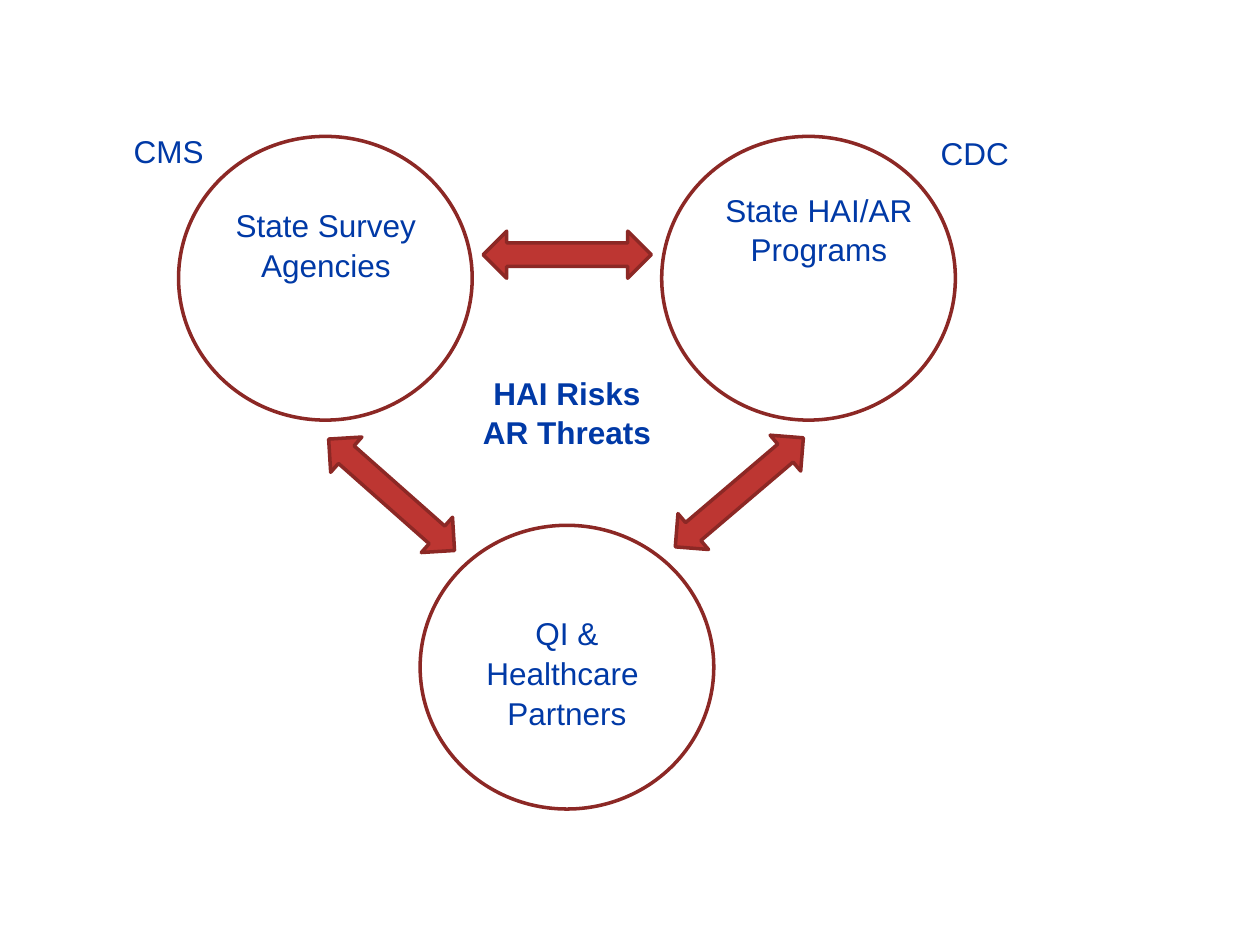
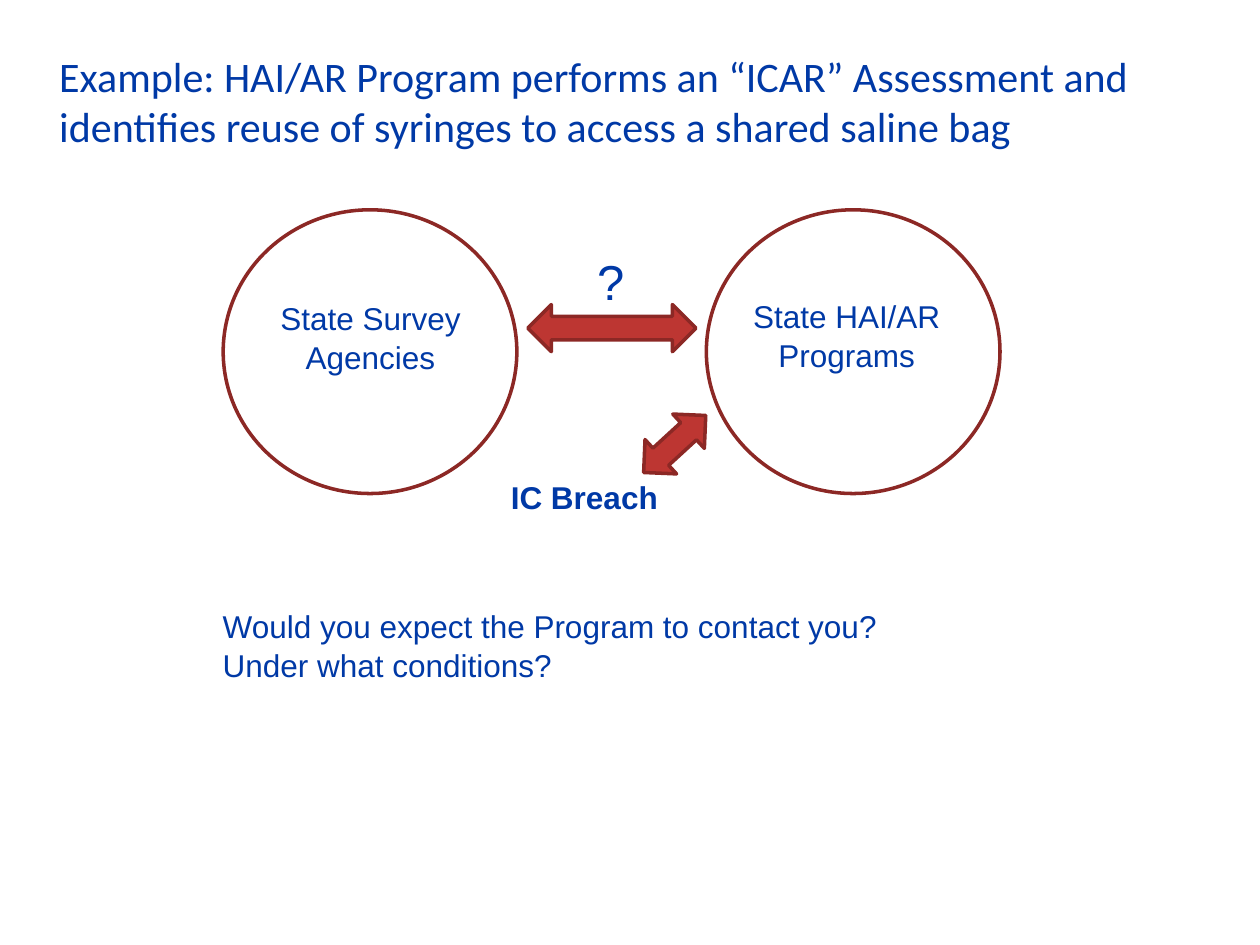
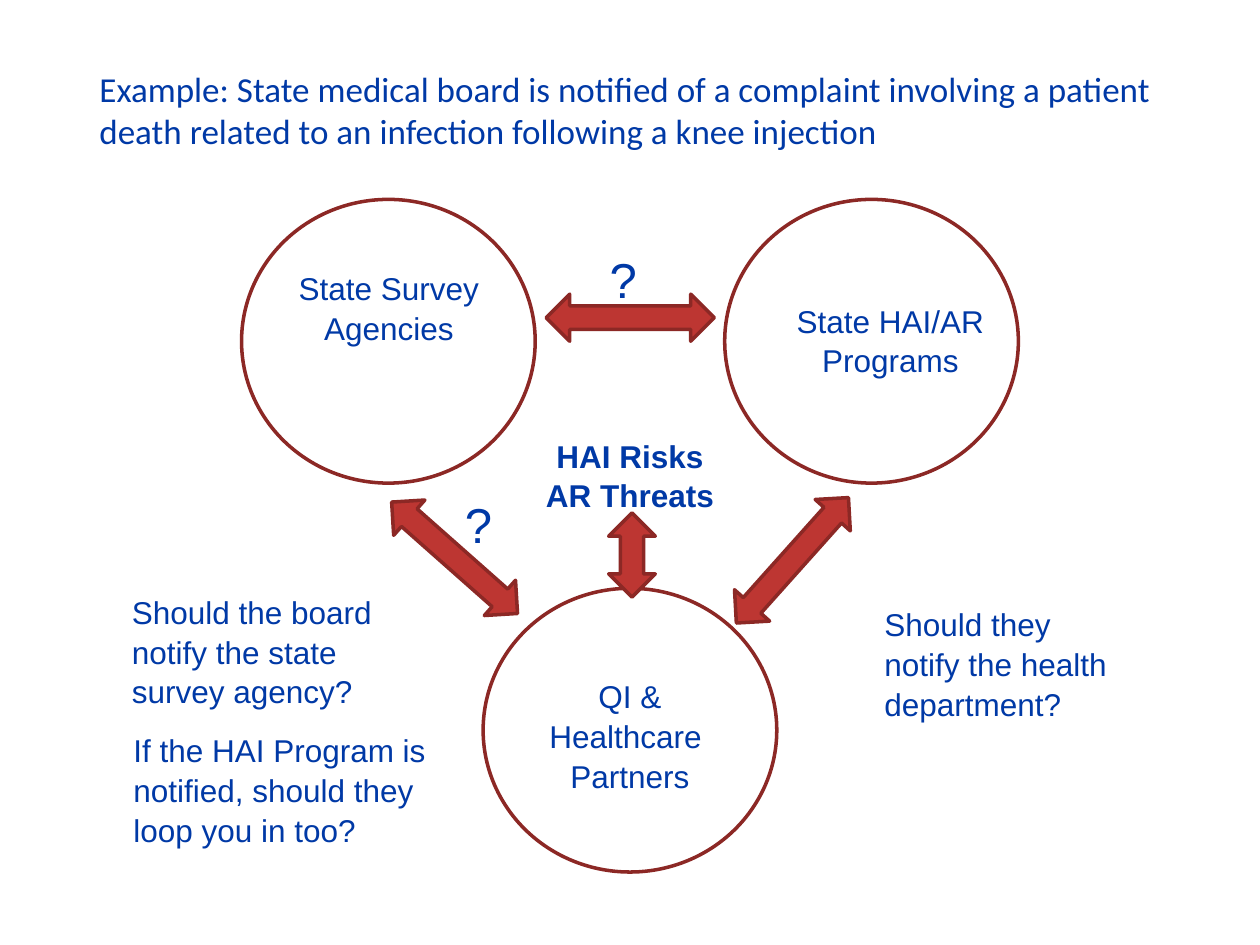
from pptx import Presentation
from pptx.dml.color import RGBColor
from pptx.enum.shapes import MSO_SHAPE
from pptx.enum.text import MSO_ANCHOR, MSO_AUTO_SIZE, PP_ALIGN
from pptx.util import Cm, Pt

CIRCLE = MSO_SHAPE.FLOWCHART_CONNECTOR
ARROW = MSO_SHAPE.LEFT_RIGHT_ARROW
LEFT, CENTER = PP_ALIGN.LEFT, PP_ALIGN.CENTER
TOP = MSO_ANCHOR.TOP
NO_FIT = MSO_AUTO_SIZE.NONE

BLUE, RED, DARK, WHITE = "0039A6", "BD3632", "8C2825", "FFFFFF"
TITLE_ONLY, BLANK = 5, 6
RING = (5.92, 5.72)
LONG = (3.39, 0.95)
SHORT = (1.7, 0.94)
LABEL = (4.66, 2.56)
STEP = 9.74  # from one upper circle to the next


def color(code):
    return RGBColor.from_string(code)


def place(x, y, size):
    return [Cm(n) for n in (x, y, *size)]


def draw(slide, kind, x, y, size, fill, turn=0):
    shape = slide.shapes.add_shape(kind, *place(x, y, size))
    shape.shadow.inherit = False
    shape.fill.solid()
    shape.fill.fore_color.rgb = color(fill)
    shape.line.color.rgb = color(DARK)
    shape.line.width = Pt(2)
    shape.rotation = turn


def ring(slide, x, y):
    draw(slide, CIRCLE, x, y, RING, WHITE)


def arrow(slide, x, y, size=LONG, turn=0):
    draw(slide, ARROW, x, y, size, RED, turn)


def style(para, size, name, align, bold=False):
    para.alignment = align
    font = para.font
    font.size, font.name, font.bold = Pt(size), name, bold
    font.color.rgb = color(BLUE)


def write(slide, text, x, y, size=LABEL, align=CENTER, points=18, bold=False):
    box = slide.shapes.add_textbox(*place(x, y, size))
    frame = box.text_frame
    frame.word_wrap = True
    frame.text = text
    for para in frame.paragraphs:
        para.line_spacing = 1.05
        style(para, points, "Arial", align, bold)


def ask(slide, x, y):
    """Put a large question mark beside an arrow."""
    write(slide, "?", x, y, (1.12, 1.45), LEFT, 28)


def head(slide, text, x, y, points):
    title = slide.shapes.title
    title.left, title.top, title.width, title.height = place(x, y, (22.86, 3.18))
    frame = title.text_frame
    frame.text = text
    frame.word_wrap = True
    frame.auto_size = NO_FIT
    frame.vertical_anchor = TOP
    style(frame.paragraphs[0], points, "Calibri", LEFT)


def pair(slide, x, y, survey, program):
    """Draw the two upper circles; survey and program are label offsets."""
    for col in range(2):
        ring(slide, x + col * STEP, y)
    arrow(slide, x + 6.14, y + 1.91)
    write(slide, "State Survey Agencies", x + survey[0], y + survey[1])
    write(slide, "State HAI/AR Programs", x + program[0], y + program[1])


def triad(slide, x, y, program, link):
    """Draw three linked circles; link is the right arrow's offset and turn."""
    pair(slide, x, y, (0.64, 1.24), program)
    ring(slide, x + STEP / 2, y + 7.84)
    write(slide, "HAI Risks\nAR Threats", x + 5.5, y + 4.62, bold=True)
    arrow(slide, x + link[0], y + link[1], turn=link[2])
    arrow(slide, x + 2.6, y + 6.75, turn=41.5)
    write(slide, "QI & Healthcare \nPartners", x + 5.5, y + 9.47, (4.66, 3.33))


def partners(slide):
    triad(slide, 3.6, 2.75, (10.58, 0.93), (9.61, 6.7, 319.6))
    write(slide, "CMS", 1.07, 2.49)
    write(slide, "CDC", 17.32, 2.54)


def breach(slide):
    head(slide, "Example: HAI/AR Program performs an “ICAR” Assessment and "
         "identifies reuse of syringes to access a shared saline bag",
         0.94, 0.89, 24)
    pair(slide, 4.5, 4.23, (0.64, 1.63), (10.24, 1.59))
    write(slide, "IC Breach", 9.45, 9.47, bold=True)
    arrow(slide, 12.75, 8.48, SHORT, 137.4)
    write(slide, "Would you expect the Program to contact you?\n"
          "Under what conditions?", 4.24, 12.07, (16.72, 1.8), LEFT)
    ask(slide, 11.79, 4.88)


def board(slide):
    head(slide, "Example: State medical board is notified of a complaint "
         "involving a patient death related to an infection following a "
         "knee injection", 1.75, 1.24, 20)
    triad(slide, 4.87, 4.02, (10.75, 1.9), (9.41, 6.8, 311.8))
    arrow(slide, 11.89, 10.72, SHORT, 90)
    notes = [
        ("Should they notify the health department?", 17.58, 12.04, 5.51),
        ("Should the board notify the state survey agency?", 2.41, 11.79, 5.51),
        ("If the HAI Program is notified, should they loop you in too?",
         2.44, 14.58, 7.09),
    ]
    for text, x, y, width in notes:
        write(slide, text, x, y, (width, 2.56), LEFT)
    ask(slide, 12.04, 4.85)
    ask(slide, 9.12, 9.78)


def main():
    deck = Presentation()
    deck.slide_width, deck.slide_height = Cm(25.4), Cm(19.05)
    for build, layout in ((partners, BLANK), (breach, TITLE_ONLY),
                          (board, TITLE_ONLY)):
        build(deck.slides.add_slide(deck.slide_layouts[layout]))
    deck.save("out.pptx")


if __name__ == "__main__":
    main()
